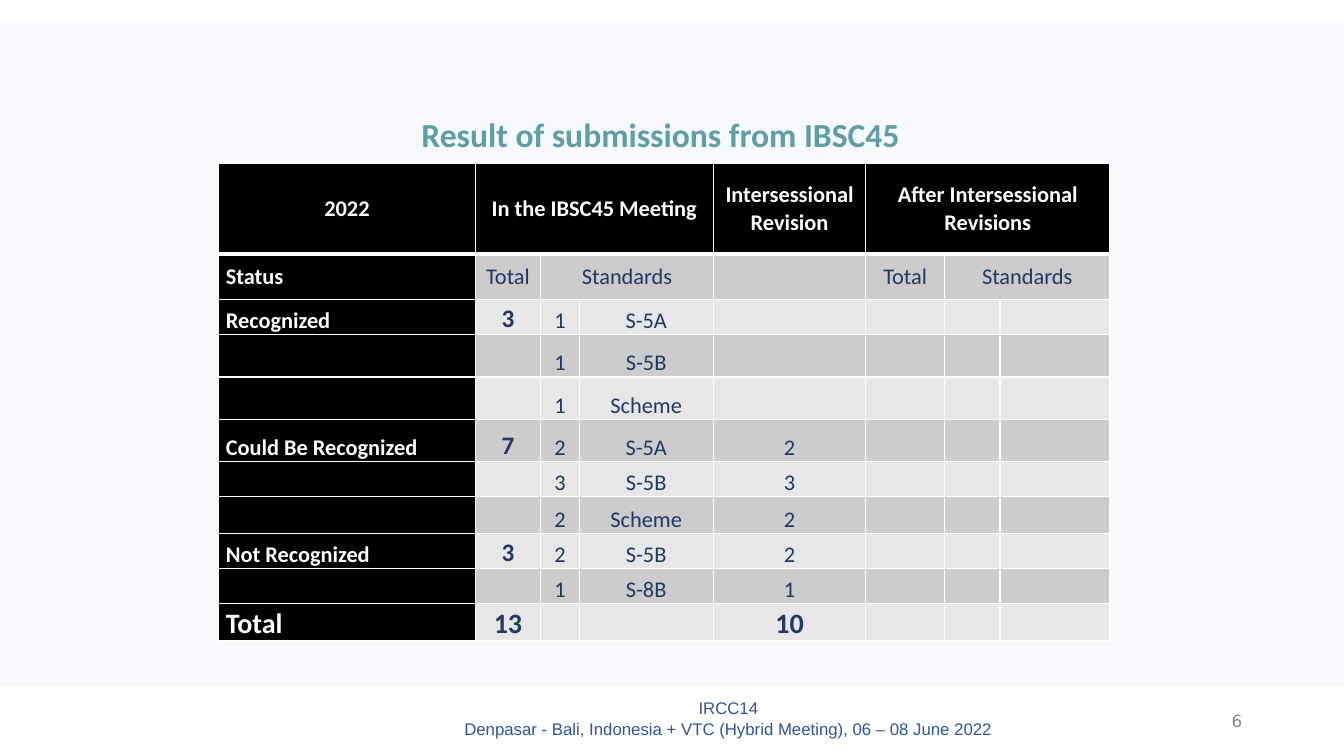
from dataclasses import dataclass

from lxml import etree
from pptx import Presentation
from pptx.dml.color import RGBColor
from pptx.enum.shapes import MSO_SHAPE
from pptx.enum.text import MSO_ANCHOR, PP_ALIGN
from pptx.oxml.ns import qn
from pptx.util import Emu, Inches, Pt

LEFT, CENTER, RIGHT = PP_ALIGN.LEFT, PP_ALIGN.CENTER, PP_ALIGN.RIGHT
TOP, MIDDLE, BOTTOM = MSO_ANCHOR.TOP, MSO_ANCHOR.MIDDLE, MSO_ANCHOR.BOTTOM
RECT = MSO_SHAPE.RECTANGLE
WIDE, HIGH = Inches(13.33), Inches(7.5)
TITLE_ONLY = 5


@dataclass(frozen=True)
class Theme:
    white: str = "FFFFFF"
    black: str = "000000"
    navy: str = "203864"
    teal: str = "3C8C93"
    blue: str = "2F5597"
    gray: str = "898989"
    panel: str = "DAE3F3"
    bands: tuple = ("E7E7E7", "CCCCCC")
    font: str = "Calibri"
    plain: str = "Arial"
    page: str = "DejaVu Sans"
    small: int = 12
    body: int = 16
    count: int = 18
    total: int = 20
    title: int = 24


THEME = Theme()

COLS = [254, 65, 38, 133, 151, 78, 55, 109]
ROWS = [90, 45, 35, 42, 42, 42, 35, 36, 35, 35, 37]
SPANS = [(0, 1, 3), (0, 5, 7), (1, 2, 3), (1, 6, 7)]
CELLS = [
    ["2022", "In the IBSC45 Meeting", "", "", "Intersessional Revision",
     "After Intersessional Revisions"],
    ["Status", "Total", "Standards", "", "", "Total", "Standards"],
    ["Recognized", "3", "1", "S-5A"],
    ["", "", "1", "S-5B"],
    ["", "", "1", "Scheme"],
    ["Could Be Recognized", "7", "2", "S-5A", "2"],
    ["", "", "3", "S-5B", "3"],
    ["", "", "2", "Scheme", "2"],
    ["Not Recognized", "3", "2", "S-5B", "2"],
    ["", "", "1", "S-8B", "1"],
    ["Total", "13", "", "", "10"],
]


def place(x, y, w, h):
    """Turn percentages of the slide into lengths."""
    return [Emu(int(side * part / 100))
            for side, part in zip((WIDE, HIGH, WIDE, HIGH), (x, y, w, h))]


def write(frame, text, size, color, font, align, bold=False):
    frame.text = text
    for para in frame.paragraphs:
        para.alignment = align
        for run in para.runs:
            run.font.size = Pt(size)
            run.font.name = font
            run.font.bold = bold
            run.font.color.rgb = RGBColor.from_string(color)


def add_panel(slide, box):
    panel = slide.shapes.add_shape(RECT, *place(*box))
    panel.shadow.inherit = False
    panel.line.fill.background()
    panel.fill.solid()
    panel.fill.fore_color.rgb = RGBColor.from_string(THEME.panel)
    tint = panel.fill._xPr.find(".//" + qn("a:srgbClr"))
    etree.SubElement(tint, qn("a:alpha"), val="21000")


def add_title(slide, text, box):
    title = slide.shapes.title
    title.left, title.top, title.width, title.height = place(*box)
    title.text_frame.vertical_anchor = TOP
    write(title.text_frame, text, THEME.title, THEME.teal, THEME.font, LEFT, True)


def add_label(slide, text, box, color, font, align):
    frame = slide.shapes.add_textbox(*place(*box)).text_frame
    frame.word_wrap = True
    frame.vertical_anchor = MIDDLE
    write(frame, text, THEME.small, color, font, align)


def add_edges(cell, row):
    """Draw white borders, with a thick rule under the header."""
    thick = {0: "lnB", 1: "lnT"}.get(row)
    for side in ("lnL", "lnR", "lnT", "lnB"):
        width = Pt(3 if side == thick else 1)
        edge = etree.SubElement(cell._tc.get_or_add_tcPr(), qn("a:" + side),
                                w=str(width))
        fill = etree.SubElement(edge, qn("a:solidFill"))
        etree.SubElement(fill, qn("a:srgbClr"), val=THEME.white)


def style_cell(cell, row, col, text):
    head, last = row == 0, row == len(ROWS) - 1
    dark = head or col == 0
    count = col == 1 and row > 1
    size = THEME.total if last else THEME.count if count else THEME.body
    add_edges(cell, row)
    cell.fill.solid()
    cell.fill.fore_color.rgb = RGBColor.from_string(
        THEME.black if dark else THEME.bands[row % 2])
    cell.margin_left = cell.margin_right = Inches(0.07)
    cell.margin_top = cell.margin_bottom = 0
    cell.vertical_anchor = MIDDLE if row < 2 else BOTTOM
    write(cell.text_frame, text, size, THEME.white if dark else THEME.navy,
          THEME.font, LEFT if col == 0 and not head else CENTER,
          dark or count or last)


def add_grid(slide, box):
    x, y, w, h = place(*box)
    table = slide.shapes.add_table(len(ROWS), len(COLS), x, y, w, h).table
    for col, part in zip(table.columns, COLS):
        col.width = Emu(int(w * part / sum(COLS)))
    for row, part in zip(table.rows, ROWS):
        row.height = Emu(int(h * part / sum(ROWS)))
    for r, texts in enumerate(CELLS):
        for c in range(len(COLS)):
            text = texts[c] if c < len(texts) else ""
            style_cell(table.cell(r, c), r, c, text)
    for r, first, last in SPANS:
        table.cell(r, first).merge(table.cell(r, last))


def main():
    deck = Presentation()
    deck.slide_width, deck.slide_height = WIDE, HIGH
    slide = deck.slides.add_slide(deck.slide_layouts[TITLE_ONLY])
    add_panel(slide, (0, 3.07, 100, 87.73))
    add_label(slide, "IRCC14\vDenpasar - Bali, Indonesia + VTC (Hybrid Meeting), "
              "06 – 08 June 2022", (32.48, 92, 43.44, 6),
              THEME.blue, THEME.plain, CENTER)
    add_label(slide, "6", (70.67, 92.67, 22.5, 5.33), THEME.gray, THEME.page, RIGHT)
    add_grid(slide, (16.28, 21.6, 66.32, 63.2))
    add_title(slide, "Result of submissions from IBSC45", (30.6, 14.4, 39, 7.2))
    deck.save("out.pptx")


if __name__ == "__main__":
    main()
